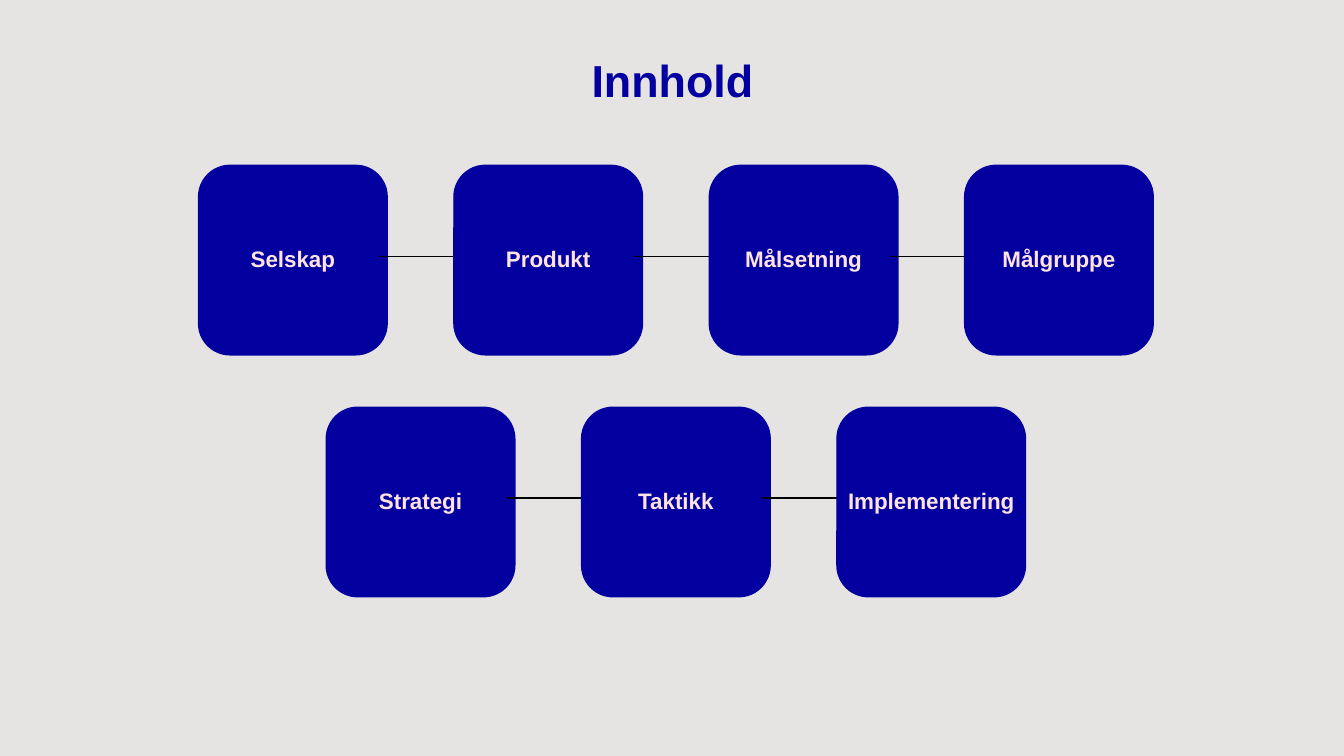
from pptx import Presentation
from pptx.dml.color import RGBColor
from pptx.enum.shapes import MSO_CONNECTOR as Line, MSO_SHAPE as Shape
from pptx.enum.text import MSO_ANCHOR as Anchor, PP_ALIGN as Align
from pptx.util import Inches, Pt
from lxml.etree import SubElement
from pptx.oxml.ns import qn

NAVY = RGBColor(0x03, 0x00, 0x9F)
PINK = RGBColor(0xFD, 0xE4, 0xE3)
GREY = RGBColor(0xE6, 0xE4, 0xE3)
BLACK = RGBColor(0, 0, 0)
FONT = "Arial"

WIDE, HIGH = 13.33, 7.5
STEP = WIDE * 0.19         # column pitch
TILE_W, TILE_H = 1.87, 1.88
OVERLAP = 0.08             # link start inside the left tile
LINK_Y = 0.48              # link height as a share of the tile

ROWS = [
    (1.97, 1.64, ["Selskap", "Produkt", "Målsetning", "Målgruppe"]),
    (1.97 + STEP / 2, 4.04, ["Strategi", "Taktikk", "Implementering"]),
]


def write(frame, text, size, color):
    frame.vertical_anchor = Anchor.MIDDLE
    par = frame.paragraphs[0]
    par.text = text
    par.alignment = Align.CENTER
    par.line_spacing = 0.9
    font = par.font
    font.name, font.size, font.bold = FONT, Pt(size), True
    font.color.rgb = color


def add_title(slide, left, top, width, height):
    box = slide.shapes.add_textbox(
        Inches(left), Inches(top), Inches(width), Inches(height))
    box.text_frame.word_wrap = False
    write(box.text_frame, "Innhold", 32, NAVY)


def add_tile(slide, left, top, text):
    tile = slide.shapes.add_shape(
        Shape.ROUNDED_RECTANGLE,
        Inches(left), Inches(top), Inches(TILE_W), Inches(TILE_H))
    tile.shadow.inherit = False
    tile.fill.solid()
    tile.fill.fore_color.rgb = NAVY
    tile.line.color.rgb = NAVY
    tile.line.width = Pt(1)
    frame = tile.text_frame
    frame.margin_left = frame.margin_right = 0
    frame.word_wrap = True
    write(frame, text, 16, PINK)


def add_link(slide, start, end, y):
    link = slide.shapes.add_connector(
        Line.STRAIGHT, Inches(start), Inches(y), Inches(end), Inches(y))
    link.line.color.rgb = BLACK
    link.line.width = Pt(1)
    SubElement(link._element.spPr, qn("a:effectLst"))


def add_row(slide, left, top, names):
    for col, name in enumerate(names):
        x = left + col * STEP
        # Link from the tile before, laid under this tile
        if col:
            start = x - STEP + TILE_W - OVERLAP
            add_link(slide, x, start, top + TILE_H * LINK_Y)
        add_tile(slide, x, top, name)


def main():
    deck = Presentation()
    deck.slide_width, deck.slide_height = Inches(WIDE), Inches(HIGH)
    slide = deck.slides.add_slide(deck.slide_layouts[6])

    # Backdrop
    fill = slide.background.fill
    fill.solid()
    fill.fore_color.rgb = GREY

    # Topic tiles
    for left, top, names in ROWS:
        add_row(slide, left, top, names)

    # Heading
    add_title(slide, 5.76, 0.53, 1.82, 0.59)

    deck.save("out.pptx")


if __name__ == "__main__":
    main()
